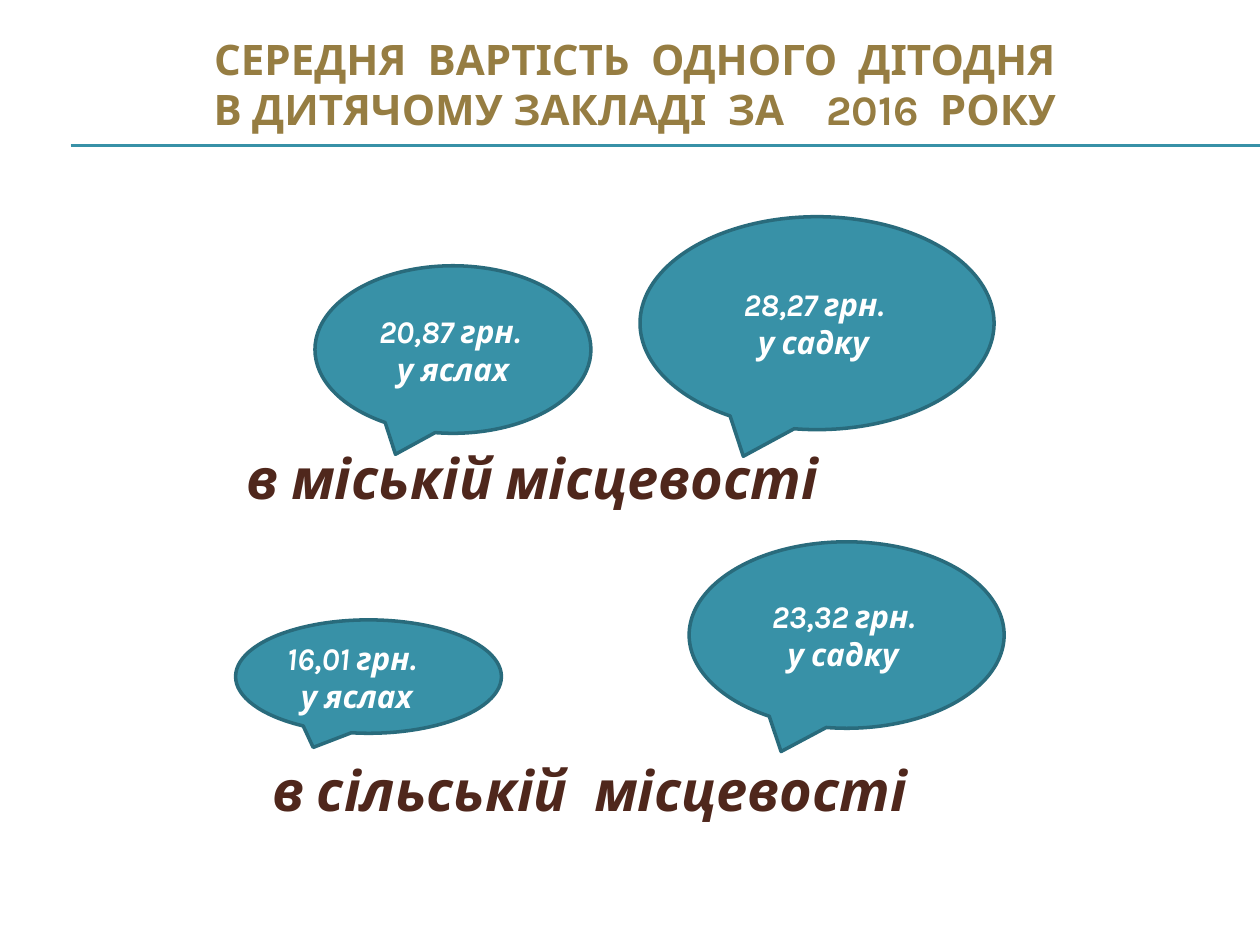
from dataclasses import dataclass

import pptx
import pptx.dml.color
import pptx.enum.shapes
import pptx.enum.text
import pptx.oxml
import pptx.util
from pptx.util import Inches

FONT = "Karla"
TEAL, TEAL_DARK = "3891A7", "296B7C"
GOLD, BROWN, WHITE = "967D42", "4F271C", "FFFFFF"
ALIGN = pptx.enum.text.PP_ALIGN
ANCHOR = pptx.enum.text.MSO_ANCHOR


@dataclass
class Price:
    left: float
    top: float
    width: float
    height: float
    lines: tuple[str, str]
    align: ALIGN = ALIGN.CENTER
    second_indent: float = 0


@dataclass
class Phrase:
    text: str
    gap_before: float = 0  # points added to the space before the phrase


def color(value: str) -> pptx.dml.color.RGBColor:
    return pptx.dml.color.RGBColor.from_string(value)


def add_run(paragraph, text: str, size: float, ink: str, italic: bool = False):
    run = paragraph.add_run()
    run.text = text
    run.font.name = FONT
    run.font.size = pptx.util.Pt(size)
    run.font.bold = True
    run.font.italic = italic
    run.font.color.rgb = color(ink)
    return run


def add_phrases(paragraph, phrases: list[Phrase], size: float, ink: str, italic: bool = False) -> None:
    for phrase in phrases:
        if phrase.gap_before:
            space = add_run(paragraph, " ", size, ink, italic)
            space.font._element.set("spc", str(round(phrase.gap_before * 100)))
        add_run(paragraph, phrase.text, size, ink, italic)


def add_text_box(slide, left: float, top: float, width: float, height: float, anchor: ANCHOR):
    box = slide.shapes.add_textbox(Inches(left), Inches(top), Inches(width), Inches(height))
    frame = box.text_frame
    frame.word_wrap = True
    frame.vertical_anchor = anchor
    return frame


def add_rule(slide, y: float) -> None:
    rule = slide.shapes.add_connector(
        pptx.enum.shapes.MSO_CONNECTOR.STRAIGHT, Inches(0.56), Inches(y), Inches(10), Inches(y))
    rule.line.color.rgb = color(TEAL)
    rule.line.width = pptx.util.Pt(0.75)
    rule._element.spPr.append(pptx.oxml.parse_xml(
        '<a:effectLst xmlns:a="http://schemas.openxmlformats.org/drawingml/2006/main"/>'))


def add_price(slide, price: Price) -> None:
    callout = slide.shapes.add_shape(
        pptx.enum.shapes.MSO_SHAPE.OVAL_CALLOUT,
        Inches(price.left), Inches(price.top), Inches(price.width), Inches(price.height))
    callout.shadow.inherit = False
    callout.fill.solid()
    callout.fill.fore_color.rgb = color(TEAL)
    callout.line.color.rgb = color(TEAL_DARK)
    callout.line.width = pptx.util.Pt(2)
    frame = callout.text_frame
    frame.word_wrap = True
    frame.vertical_anchor = ANCHOR.MIDDLE
    amount, group = frame.paragraphs[0], frame.add_paragraph()
    for paragraph, text in zip((amount, group), price.lines):
        paragraph.alignment = price.align
        add_run(paragraph, text, 18, WHITE, italic=True)
    if price.second_indent:
        group._p.get_or_add_pPr().set("marL", str(Inches(price.second_indent)))


def add_area(slide, left: float, top: float, phrases: list[Phrase]) -> None:
    frame = add_text_box(slide, left, top, 6.5, 0.6, ANCHOR.TOP)
    frame.margin_left = frame.margin_right = frame.margin_top = frame.margin_bottom = 0
    add_phrases(frame.paragraphs[0], phrases, 32, BROWN, italic=True)


TITLE = [
    [Phrase("СЕРЕДНЯ"), Phrase("ВАРТІСТЬ", 6), Phrase("ОДНОГО", 6), Phrase("ДІТОДНЯ ", 6)],
    [Phrase("В ДИТЯЧОМУ ЗАКЛАДІ"), Phrase("ЗА", 6), Phrase("2016", 18), Phrase("РОКУ ", 6)],
]
PRICES = [
    Price(5.08, 1.72, 2.81, 1.69, ("28,27 грн. ", "у садку ")),
    Price(2.5, 2.11, 2.19, 1.33, ("20,87 грн. ", "у яслах")),
    Price(5.47, 4.3, 2.5, 1.48, ("23,32 грн. ", "у садку ")),
    Price(1.87, 4.92, 2.11, 0.9, ("16,01 грн.", "у яслах"), ALIGN.LEFT, 0.11),
]


def main() -> None:
    deck = pptx.Presentation()
    deck.slide_width, deck.slide_height = Inches(10), Inches(7.5)
    slide = deck.slides.add_slide(deck.slide_layouts[6])

    # Double rule under the title
    for y in (1.15, 1.16):
        add_rule(slide, y)

    # Title
    heading = add_text_box(slide, 0.33, 0, 9.5, 1.33, ANCHOR.MIDDLE).paragraphs[0]
    heading.alignment = ALIGN.CENTER
    for number, phrases in enumerate(TITLE):
        if number:
            heading.add_line_break()
        add_phrases(heading, phrases, 24, GOLD)

    # Urban and rural areas
    add_area(slide, 1.96, 3.52, [Phrase("в міській місцевості")])
    add_area(slide, 2.16, 6, [Phrase("в сільській"), Phrase("місцевості", 8)])

    # Daily cost per child
    for price in PRICES:
        add_price(slide, price)

    deck.save("out.pptx")


if __name__ == "__main__":
    main()
